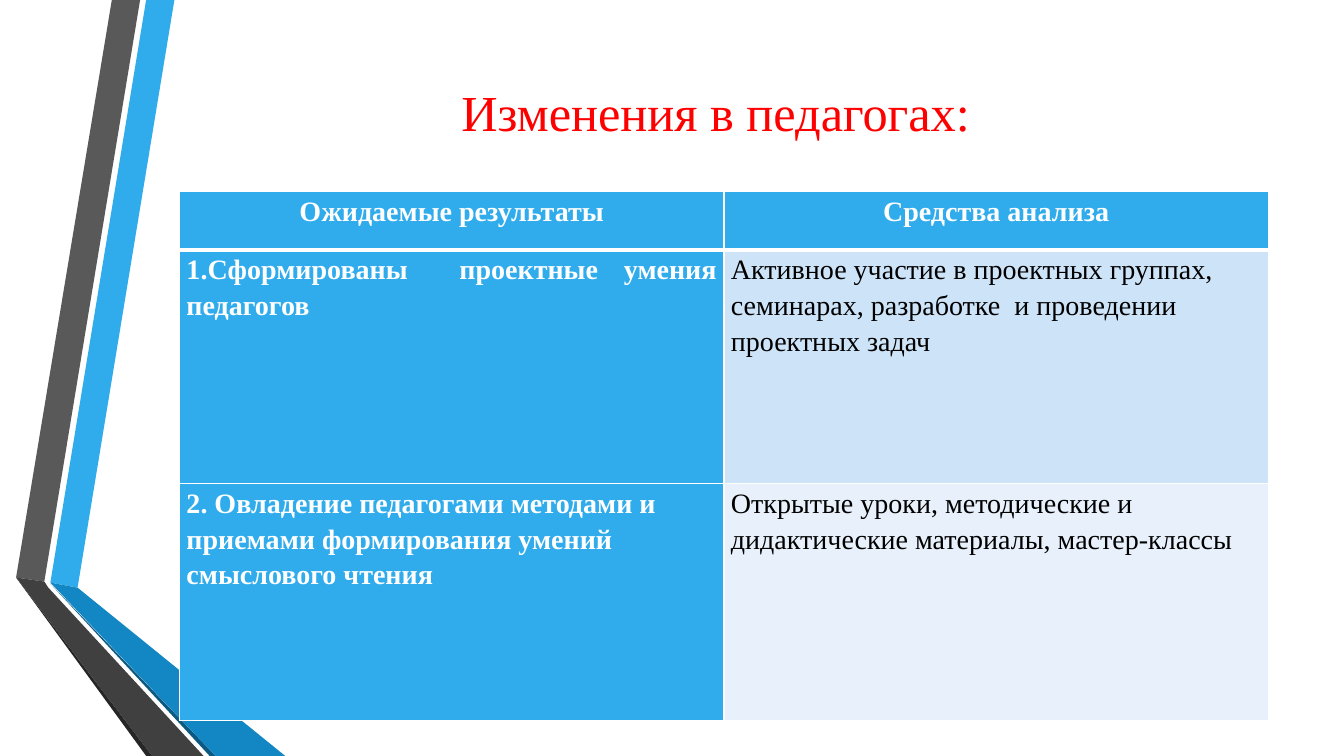
from lxml import etree
from pptx import Presentation
from pptx import util as u
from pptx.dml.color import RGBColor
from pptx.enum import text
from pptx.oxml import ns

PX = 9144
FONT = "Times New Roman"
BLUE, WHITE, BLACK = "30ACEC", "FFFFFF", "000000"

RIBBONS = [
    (BLUE, [(50, 578), (77, 583), (173, 0), (145, 0)]),
    ("595959", [(139, 0), (111, 0), (16, 573), (44, 577)]),
    ("262626", [(16, 573), (145, 750), (151, 750)]),
    ("0C5A82", [(50, 579), (208, 750), (214, 750)]),
    ("1287C3", [(50, 578), (214, 750), (283, 750), (77, 583)]),
    ("404040", [(202, 750), (48, 583), (44, 577), (16, 573), (151, 750)]),
]
ROW_HEIGHTS = [58, 232, 235]
COLUMN_WIDTHS = [540, 540]
ROWS = [
    [("Ожидаемые результаты", BLUE, "CENTER"),
     ("Средства анализа", BLUE, "CENTER")],
    [("1.Сформированы  проектные умения педагогов", BLUE, "JUSTIFY"),
     ("Активное участие в проектных группах, семинарах, разработке  и проведении проектных задач",
      "CDE3F8", "LEFT")],
    [("2. Овладение педагогами методами и приемами формирования умений смыслового чтения",
      BLUE, "LEFT"),
     ("Открытые уроки, методические и дидактические материалы, мастер-классы",
      "E8F1FB", "LEFT")],
]


def px(length):
    """Turn px into EMU."""
    return u.Emu(length * PX)


def paint(color_format, color):
    """Give a colour format a hex colour."""
    color_format.rgb = RGBColor.from_string(color)


def fill_solid(item, color):
    """Fill a shape or a cell with one colour."""
    item.fill.solid()
    paint(item.fill.fore_color, color)


def set_values(target, values):
    """Set attributes from a dict."""
    for name, value in values.items():
        setattr(target, name, value)


def write(frame, words, size, color, align, bold=False, spacing=1.0):
    """Write one formatted paragraph into a text frame."""
    para = frame.paragraphs[0]
    set_values(para, {"alignment": getattr(text.PP_ALIGN, align), "line_spacing": spacing})
    span = para.add_run()
    span.text = words
    set_values(span.font, {"name": FONT, "size": u.Pt(size), "bold": bold})
    paint(span.font.color, color)


def add_ribbon(page, color, points):
    """Draw one closed outline of the ribbon."""
    builder = page.shapes.build_freeform(*points[0], scale=PX)
    builder.add_line_segments(points[1:], close=True)
    ribbon = builder.convert_to_shape()
    ribbon.shadow.inherit = False
    ribbon.line.fill.background()
    fill_solid(ribbon, color)


def add_title(page, words):
    """Add the centred heading."""
    box = page.shapes.add_textbox(px(162), px(75), px(1096), px(70))
    set_values(box.text_frame, {"word_wrap": True, "vertical_anchor": text.MSO_ANCHOR.MIDDLE})
    write(box.text_frame, words, 36, "FF0000", "CENTER")


def add_border(cell, side, width):
    """Draw one white border of a cell."""
    properties = cell._tc.get_or_add_tcPr()
    line = etree.SubElement(properties, ns.qn(f"a:ln{side}"), w=str(u.Pt(width)))
    solid = etree.SubElement(line, ns.qn("a:solidFill"))
    etree.SubElement(solid, ns.qn("a:srgbClr"), val=WHITE)


def fill_cell(cell, row, words, color, align):
    """Set the text, borders and fill of a cell."""
    margins = {"margin_left": px(7), "margin_right": px(7), "margin_top": 0, "margin_bottom": 0}
    set_values(cell, margins)
    widths = {"L": 1, "R": 1, "T": 3 if row == 1 else 1, "B": 3 if row == 0 else 1}
    for side, width in widths.items():
        add_border(cell, side, width)
    fill_solid(cell, color)
    on_blue = color == BLUE
    write(cell.text_frame, words, 20, WHITE if on_blue else BLACK, align, on_blue, 1.15)


def add_results(page):
    """Add the table of expected results."""
    frame = page.shapes.add_table(len(ROWS), len(COLUMN_WIDTHS), px(178), px(190),
                                  px(sum(COLUMN_WIDTHS)), px(sum(ROW_HEIGHTS)))
    table = frame.table
    for column, width in zip(table.columns, COLUMN_WIDTHS):
        column.width = px(width)
    for index, height in enumerate(ROW_HEIGHTS):
        table.rows[index].height = px(height)
        for column, content in enumerate(ROWS[index]):
            fill_cell(table.cell(index, column), index, *content)


def main():
    """Build and save the slide."""
    deck = Presentation()
    set_values(deck, {"slide_width": px(1333), "slide_height": px(750)})
    page = deck.slides.add_slide(deck.slide_layouts[6])
    for color, points in RIBBONS:
        add_ribbon(page, color, points)
    add_title(page, "Изменения в педагогах:")
    add_results(page)
    deck.save("out.pptx")


if __name__ == "__main__":
    main()
